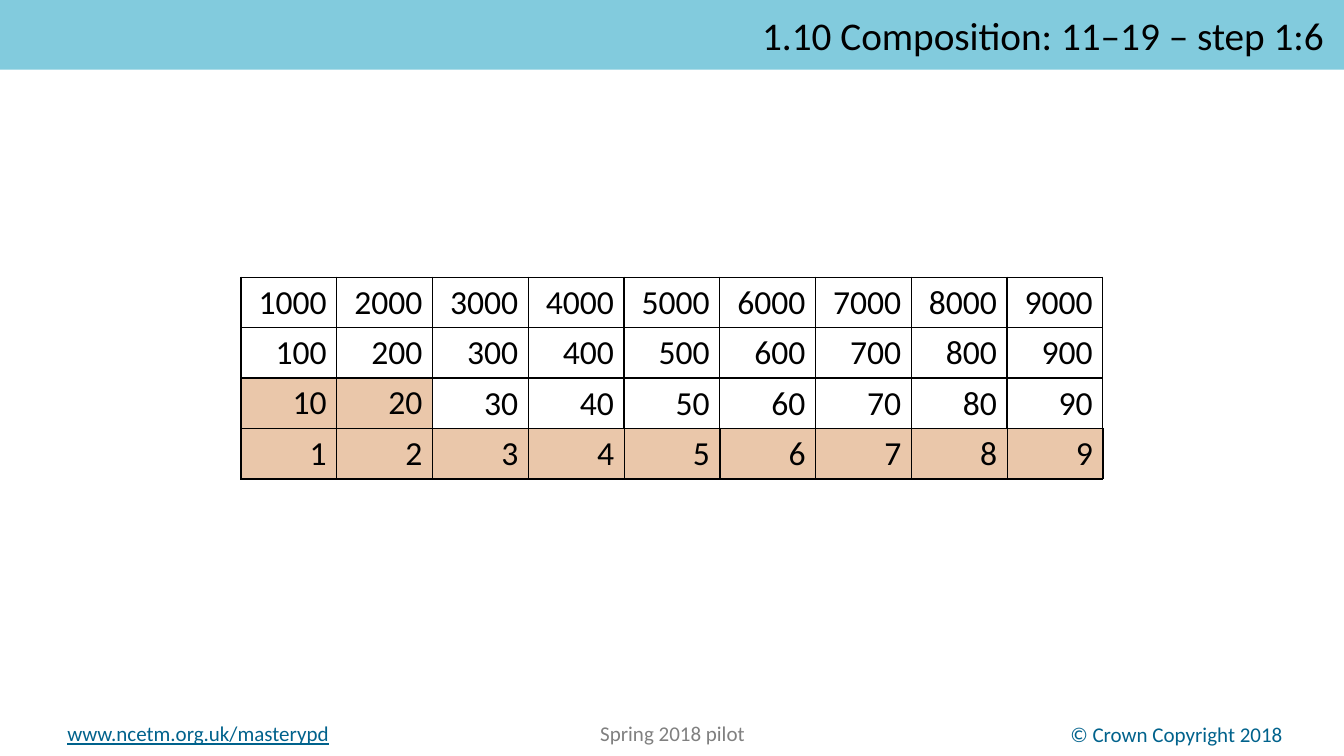
import pptx
import pptx.util
import pptx.dml.color
import pptx.enum.shapes
import pptx.enum.text
import lxml.etree
from dataclasses import dataclass

ALIGN = pptx.enum.text.PP_ALIGN
MID = pptx.enum.text.MSO_ANCHOR.MIDDLE
inch = pptx.util.Inches


@dataclass(frozen=True)
class Theme:
    font: str = "Calibri"
    band: str = "82CBDD"
    tint: str = "EAC7AA"
    ink: str = "000000"
    link: str = "00628C"
    grey: str = "808080"
    title: int = 28
    digit: int = 24
    foot: int = 15


THEME = Theme()
WIDE, HIGH = 13.33, 7.5

# Number grid, centred on the slide
COLS, ROWS = 9, 4
CELL_W, CELL_H = 0.95, 0.5
LEFT = (WIDE - COLS * CELL_W) / 2
TOP = (HIGH - ROWS * CELL_H) / 2


def rgb(code):
    return pptx.dml.color.RGBColor.from_string(code)


def write(frame, text, size, color, align):
    para = frame.paragraphs[0]
    para.text = text
    para.alignment = align
    para.font.name = THEME.font
    para.font.size = pptx.util.Pt(size)
    para.font.color.rgb = rgb(color)
    return para


def add_title(slide, text):
    kind = pptx.enum.shapes.MSO_SHAPE.RECTANGLE
    band = slide.shapes.add_shape(kind, 0, 0, inch(WIDE), inch(0.69))
    band.shadow.inherit = False
    band.fill.solid()
    band.fill.fore_color.rgb = rgb(THEME.band)
    band.line.fill.background()
    frame = band.text_frame
    frame.word_wrap = True
    frame.vertical_anchor = MID
    frame.margin_left = frame.margin_right = inch(0.2)
    write(frame, text, THEME.title, THEME.ink, ALIGN.RIGHT)


def add_foot(slide, left, top, text, color, align):
    box = slide.shapes.add_textbox(inch(left), inch(top), inch(4.1), inch(0.35))
    frame = box.text_frame
    frame.word_wrap = True
    return frame, write(frame, text, THEME.foot, color, align)


def edge(cell):
    props = cell._tc.get_or_add_tcPr()
    ns = "http://schemas.openxmlformats.org/drawingml/2006/main"
    for side in ("lnL", "lnR", "lnT", "lnB"):
        line = lxml.etree.SubElement(props, f"{{{ns}}}{side}", w="12700")
        fill = lxml.etree.SubElement(line, f"{{{ns}}}solidFill")
        lxml.etree.SubElement(fill, f"{{{ns}}}srgbClr", val=THEME.ink)


def add_grid(slide, col, row, nums, tint=None):
    """Place rows of numbers with the first cell at the given grid place."""
    rows, cols = len(nums), len(nums[0])
    table = slide.shapes.add_table(
        rows, cols, inch(LEFT + col * CELL_W), inch(TOP + row * CELL_H),
        inch(cols * CELL_W), inch(rows * CELL_H)).table
    table.first_row = table.horz_banding = False
    for r, line in enumerate(nums):
        for c, num in enumerate(line):
            cell = table.cell(r, c)
            edge(cell)
            if tint:
                cell.fill.solid()
                cell.fill.fore_color.rgb = rgb(tint)
            else:
                cell.fill.background()
            write(cell.text_frame, str(num), THEME.digit, THEME.ink, ALIGN.RIGHT)


def main():
    deck = pptx.Presentation()
    deck.slide_width, deck.slide_height = inch(WIDE), inch(HIGH)
    slide = deck.slides.add_slide(deck.slide_layouts[6])

    # Footer
    frame, _ = add_foot(slide, 8.77, 7.11, "© Crown Copyright 2018",
                        THEME.link, ALIGN.RIGHT)
    frame.margin_right = inch(0.15)
    _, web = add_foot(slide, 0.57, 7.1, "www.ncetm.org.uk/masterypd",
                      THEME.link, ALIGN.LEFT)
    web.font.underline = True
    add_foot(slide, 4.62, 7.1, "Spring 2018 pilot", THEME.grey, ALIGN.CENTER)

    # Title band
    add_title(slide, "1.10 Composition: 11–19 – step 1:6")

    # Place value chart: thousands down to ones
    nums = [[n * 10 ** p for n in range(1, COLS + 1)]
            for p in reversed(range(ROWS))]
    add_grid(slide, 0, 0, nums)

    # Tinted cards over 10, all the ones, and 20
    tens, ones = ROWS - 2, ROWS - 1
    cards = [(0, tens), *((c, ones) for c in range(COLS)), (1, tens)]
    for col, row in cards:
        add_grid(slide, col, row, [[nums[row][col]]], THEME.tint)

    deck.save("out.pptx")


if __name__ == "__main__":
    main()
